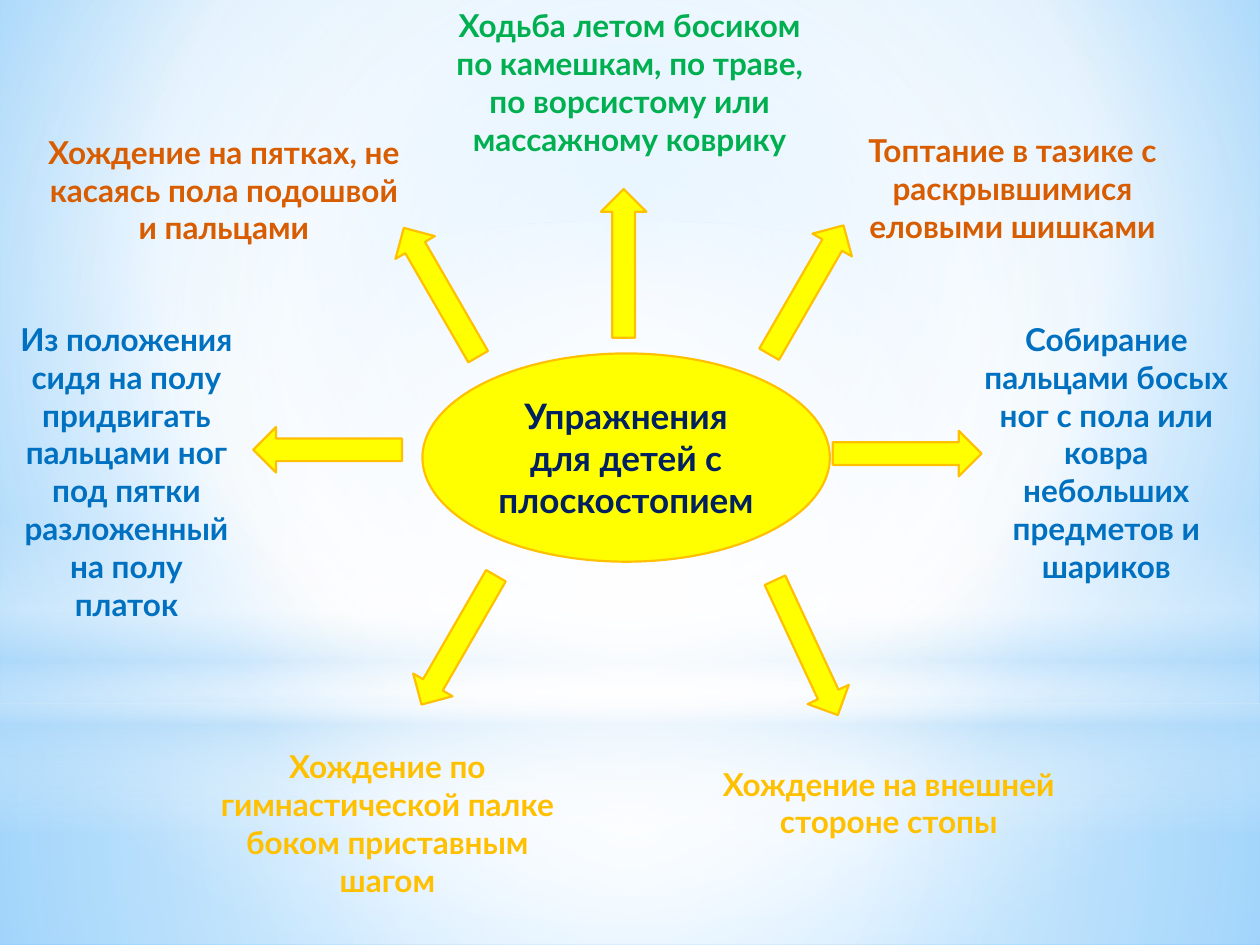
import pptx
import pptx.dml.color
import pptx.enum.shapes
import pptx.enum.text
import pptx.oxml
import pptx.oxml.ns
import pptx.util
from dataclasses import dataclass

Pt = pptx.util.Pt
RGB = pptx.dml.color.RGBColor.from_string
SHAPES = pptx.enum.shapes.MSO_SHAPE
qn = pptx.oxml.ns.qn


@dataclass(frozen=True)
class Theme:
    font: str = "Lato"
    title_size: int = 20
    label_size: int = 18
    outline_width: float = 1.25
    white: str = "FFFFFF"
    haze: str = "B4DCFA"
    sky: str = "9ED5FF"
    deep_sky: str = "5BB9FF"
    yellow: str = "FFFF00"
    amber: str = "FFC000"
    navy: str = "002060"
    green: str = "00B050"
    orange: str = "D85C00"
    blue: str = "0070C0"


theme = Theme()


def write_text(frame, text, *, size, color):
    frame.word_wrap = True
    paragraph = frame.paragraphs[0]
    paragraph.alignment = pptx.enum.text.PP_ALIGN.CENTER
    run = paragraph.add_run()
    run.text = text
    run.font.name = theme.font
    run.font.size = Pt(size)
    run.font.bold = True
    run.font.color.rgb = RGB(color)


def paint_gradient(properties, stops, focus=None):
    stop_xml = "".join(
        f'<a:gs pos="{position * 1000}"><a:srgbClr val="{color}">'
        f'<a:alpha val="{opacity * 1000}"/></a:srgbClr></a:gs>'
        for position, color, opacity in stops
    )
    if focus:
        sides = " ".join(f'{side}="{value * 1000}"' for side, value in zip("ltrb", focus))
        direction = f'<a:path path="circle"><a:fillToRect {sides}/></a:path>'
    else:
        direction = '<a:lin ang="5400000" scaled="0"/>'
    gradient = pptx.oxml.parse_xml(
        f'<a:gradFill {pptx.oxml.ns.nsdecls("a")} rotWithShape="1">'
        f"<a:gsLst>{stop_xml}</a:gsLst>{direction}</a:gradFill>"
    )
    solid = properties.find(qn("a:solidFill"))
    properties.replace(solid, gradient)


presentation = pptx.Presentation()
presentation.slide_width = Pt(720)
presentation.slide_height = Pt(540)
slide = presentation.slides.add_slide(presentation.slide_layouts[6])

slide.background.fill.solid()
paint_gradient(
    next(slide.element.iter(qn("p:bgPr"))),
    [(0, theme.sky, 100), (60, theme.white, 100), (100, theme.deep_sky, 100)],
    (20, 10, 20, 60),
)

center = (50, 50, 50, 50)
layers = [
    (SHAPES.RECTANGLE, 401.8, 138.2, center,
     [(0, theme.white, 91), (37, theme.white, 76), (100, theme.haze, 79)]),
    (SHAPES.RECTANGLE, 0, 401.8, center,
     [(0, theme.white, 89), (48, theme.white, 62), (100, theme.haze, 79)]),
    (SHAPES.RECTANGLE, 296.6, 180, None,
     [(0, theme.white, 0), (29, theme.white, 30), (45, theme.haze, 40),
      (55, theme.white, 26), (65, theme.haze, 60), (100, theme.white, 0)]),
    (SHAPES.OVAL, 126, 401.8, center,
     [(0, theme.white, 100), (56, theme.white, 0)]),
]
for kind, top, height, focus, stops in layers:
    layer = slide.shapes.add_shape(kind, 0, Pt(top), Pt(720), Pt(height))
    layer.shadow.inherit = False
    layer.line.fill.background()
    layer.fill.solid()
    paint_gradient(layer.element.spPr, stops, focus)

hub = slide.shapes.add_shape(SHAPES.OVAL, Pt(241.4), Pt(202), Pt(232.8), Pt(119))
hub.text_frame.vertical_anchor = pptx.enum.text.MSO_ANCHOR.MIDDLE
write_text(hub.text_frame, "Упражнения для детей с плоскостопием",
           size=theme.title_size, color=theme.navy)

exercises = [
    (243.4, 0, 232.8, 94.5, theme.green,
     "Ходьба летом босиком по камешкам, по траве, по ворсистому или массажному коврику"),
    (473.8, 71.3, 209.5, 72.7, theme.orange,
     "Топтание в тазике с раскрывшимися еловыми шишками"),
    (14.2, 72.4, 227.5, 72.7, theme.orange,
     "Хождение на пятках, не касаясь пола подошвой и пальцами"),
    (553, 179.3, 158.4, 160, theme.blue,
     "Собирание пальцами босых ног с пола или ковра небольших предметов и шариков"),
    (1.4, 179.3, 141.8, 181.7, theme.blue,
     "Из положения сидя на полу придвигать пальцами ног под пятки разложенный на полу платок"),
    (110.9, 423.4, 221, 94.5, theme.amber,
     "Хождение по гимнастической палке боком приставным шагом"),
    (397.4, 433.4, 221, 51, theme.amber,
     "Хождение на внешней стороне стопы"),
]
for left, top, width, height, color, text in exercises:
    label = slide.shapes.add_textbox(Pt(left), Pt(top), Pt(width), Pt(height))
    write_text(label.text_frame, text, size=theme.label_size, color=color)
    label.text_frame.auto_size = pptx.enum.text.MSO_AUTO_SIZE.SHAPE_TO_FIT_TEXT

arrow_width, arrow_length = 26, 85
arrow_centers = [
    (356.4, 150.5, 0),
    (460.8, 165.6, 30),
    (518.4, 259.2, 90),
    (187.2, 257, 270),
    (252, 167, 330),
    (262.1, 365.8, 210),
    (460.8, 370.1, 155),
]
yellow_shapes = [hub]
for x, y, angle in arrow_centers:
    arrow = slide.shapes.add_shape(
        SHAPES.UP_ARROW, Pt(x - arrow_width / 2), Pt(y - arrow_length / 2),
        Pt(arrow_width), Pt(arrow_length))
    arrow.rotation = angle
    yellow_shapes.append(arrow)

for shape in yellow_shapes:
    shape.shadow.inherit = False
    shape.fill.solid()
    shape.fill.fore_color.rgb = RGB(theme.yellow)
    shape.line.color.rgb = RGB(theme.amber)
    shape.line.width = Pt(theme.outline_width)

presentation.save("out.pptx")
